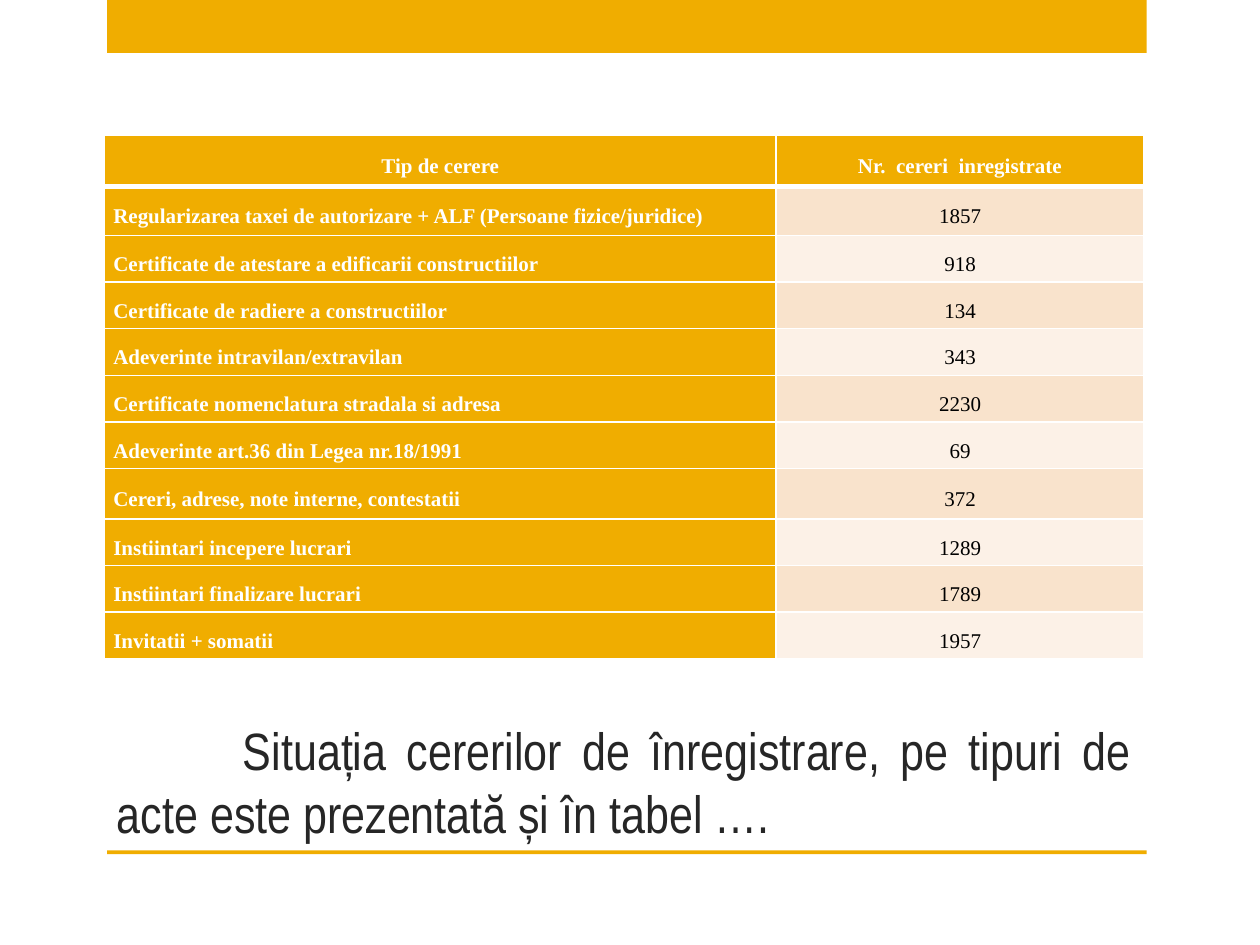
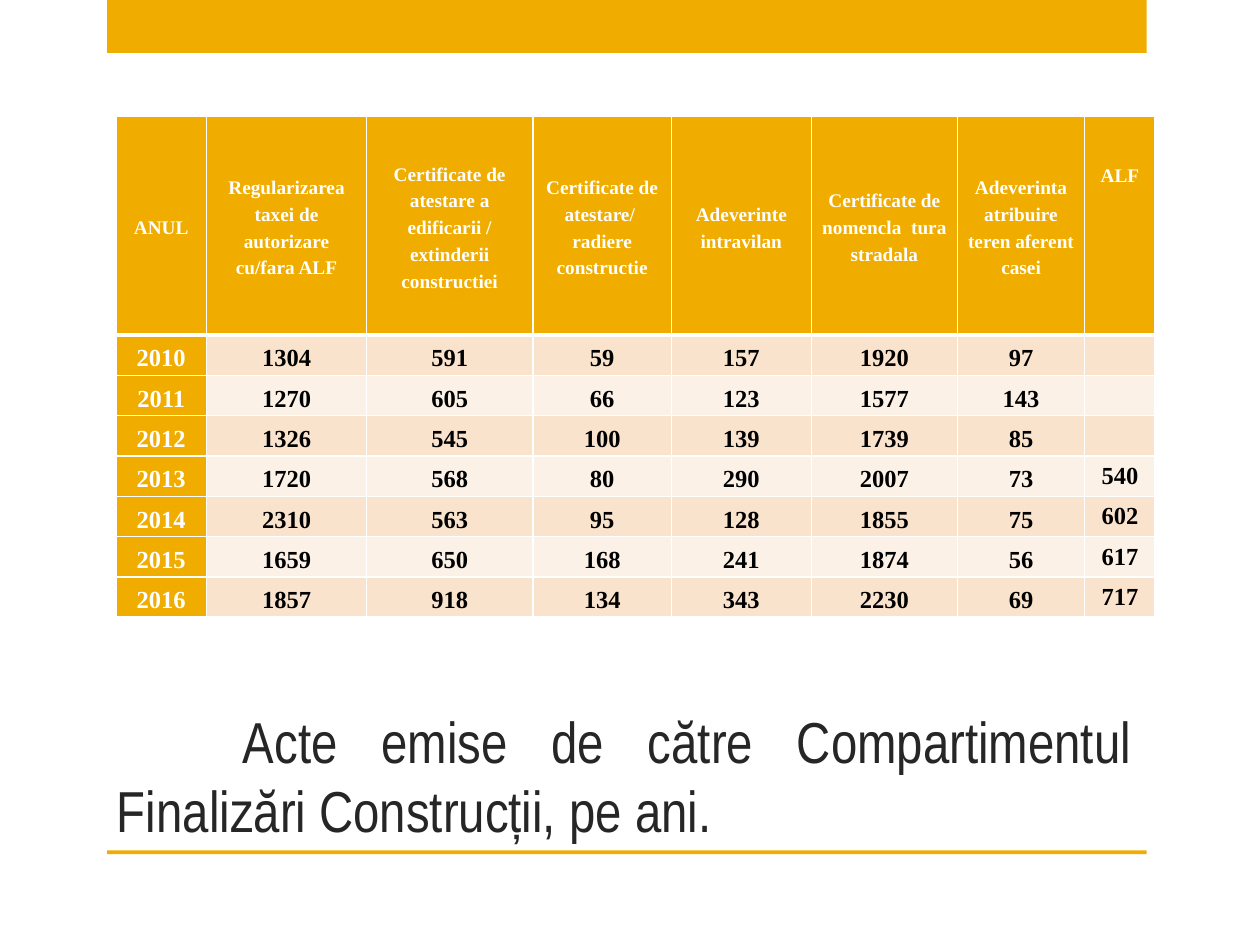
from lxml.etree import SubElement
from pptx import Presentation
from pptx.dml.color import RGBColor
from pptx.enum.shapes import MSO_SHAPE
from pptx.enum.text import MSO_ANCHOR, PP_ALIGN
from pptx.oxml.ns import qn
from pptx.util import Inches, Pt

REQUESTS = [
    ("Tip de cerere", "Nr.  cereri  inregistrate"),
    ("Regularizarea taxei de autorizare + ALF (Persoane fizice/juridice)", 1857),
    ("Certificate de atestare a edificarii constructiilor", 918),
    ("Certificate de radiere a constructiilor", 134),
    ("Adeverinte intravilan/extravilan", 343),
    ("Certificate nomenclatura stradala si adresa", 2230),
    ("Adeverinte art.36 din Legea nr.18/1991", 69),
    ("Cereri, adrese, note interne, contestatii", 372),
    ("Instiintari incepere lucrari", 1289),
    ("Instiintari finalizare lucrari", 1789),
    ("Invitatii + somatii", 1957),
]
YEARS = [
    ("ANUL", "Regularizarea taxei de autorizare cu/fara ALF",
     "Certificate de atestare a edificarii / extinderii constructiei",
     "Certificate de atestare/  radiere constructie", "Adeverinte intravilan",
     "Certificate de nomencla  tura stradala",
     "Adeverinta atribuire teren aferent casei", "ALF"),
    (2010, 1304, 591, 59, 157, 1920, 97, ""),
    (2011, 1270, 605, 66, 123, 1577, 143, ""),
    (2012, 1326, 545, 100, 139, 1739, 85, ""),
    (2013, 1720, 568, 80, 290, 2007, 73, 540),
    (2014, 2310, 563, 95, 128, 1855, 75, 602),
    (2015, 1659, 650, 168, 241, 1874, 56, 617),
    (2016, 1857, 918, 134, 343, 2230, 69, 717),
]
SLIDES = [
    dict(title="Situația cererilor de înregistrare, pe tipuri de acte "
               "este prezentată și în tabel ….",
         size=30, data=REQUESTS, left=0.83, top=1.07,
         cols=[5.33, 2.92], rows=[0.41, 0.39] + [0.37] * 5 + [0.4] + [0.37] * 3,
         head=12, body=12, bold=False, space=1.5, align=PP_ALIGN.LEFT),
    dict(title="Acte emise de către Compartimentul Finalizări Construcții, pe ani.",
         size=33, data=YEARS, left=0.92, top=0.92,
         cols=[0.72, 1.27, 1.32, 1.1, 1.11, 1.16, 1.01, 0.56],
         rows=[1.74] + [0.32] * 7,
         head=11, body=14, bold=True, space=1.25, align=PP_ALIGN.CENTER),
]

GOLD = RGBColor(0xF0, 0xAD, 0x00)
PEACH = RGBColor(0xF9, 0xE3, 0xCC)
CREAM = RGBColor(0xFC, 0xF1, 0xE7)
WHITE = RGBColor(0xFF, 0xFF, 0xFF)
BLACK = RGBColor(0, 0, 0)
GREY = RGBColor(0x26, 0x26, 0x26)
WIDTH = 8.25
BANDS = [(0, 0.42), (6.75, 0.03)]  # top, height


def add_run(para, text, font, size, color, bold=False):
    run = para.add_run()
    run.text = str(text)
    run.font.name, run.font.size = font, Pt(size)
    run.font.bold, run.font.color.rgb = bold, color


def add_bands(slide):
    for top, height in BANDS:
        band = slide.shapes.add_shape(MSO_SHAPE.RECTANGLE, Inches(0.85), Inches(top),
                                      Inches(WIDTH), Inches(height))
        band.shadow.inherit = False
        band.fill.solid()
        band.fill.fore_color.rgb = GOLD
        band.line.fill.background()


def add_title(slide, text, size):
    box = slide.shapes.add_textbox(Inches(0.83), Inches(5), Inches(WIDTH), Inches(1.75))
    frame = box.text_frame
    frame.word_wrap = True
    frame.vertical_anchor = MSO_ANCHOR.BOTTOM
    para = frame.paragraphs[0]
    para.alignment = PP_ALIGN.JUSTIFY
    props = para._p.get_or_add_pPr()
    props.set("marL", "0")
    props.set("indent", str(Inches(1)))
    add_run(para, text, "Arial Narrow", size, GREY)


def add_edges(cell, row):
    """White cell borders, thick between the header and the first row."""
    props = cell._tc.get_or_add_tcPr()
    for side in "LRTB":
        thick = (row, side) in [(0, "B"), (1, "T")]
        line = SubElement(props, qn(f"a:ln{side}"), w=str(Pt(3 if thick else 1)))
        fill = SubElement(line, qn("a:solidFill"))
        SubElement(fill, qn("a:srgbClr"), val=str(WHITE))


def fill_cell(cell, text, row, col, look):
    head, label = row == 0, col == 0
    alf = look["data"][0][col] == "ALF"
    add_edges(cell, row)
    cell.fill.solid()
    cell.fill.fore_color.rgb = GOLD if head or label else PEACH if row % 2 else CREAM
    cell.margin_left = cell.margin_right = Inches(0.07)
    cell.margin_top = Inches(0.35 if alf and head else 0)
    cell.margin_bottom = 0
    cell.vertical_anchor = MSO_ANCHOR.TOP if alf else MSO_ANCHOR.MIDDLE
    if text == "":
        return
    para = cell.text_frame.paragraphs[0]
    para.alignment = look["align"] if label and not head else PP_ALIGN.CENTER
    para.line_spacing, para.space_after = look["space"], Pt(9)
    add_run(para, text, "Times New Roman", look["head" if head else "body"],
            WHITE if head or label else BLACK, head or label or look["bold"])


def add_grid(slide, look):
    cols, rows = look["cols"], look["rows"]
    table = slide.shapes.add_table(
        len(rows), len(cols), Inches(look["left"]), Inches(look["top"]),
        Inches(sum(cols)), Inches(sum(rows))).table
    for col, width in zip(table.columns, cols):
        col.width = Inches(width)
    for row, height in zip(table.rows, rows):
        row.height = Inches(height)
    for r, items in enumerate(look["data"]):
        for c, text in enumerate(items):
            fill_cell(table.cell(r, c), text, r, c, look)


def main():
    deck = Presentation()
    deck.slide_width, deck.slide_height = Inches(10), Inches(7.5)
    for look in SLIDES:
        slide = deck.slides.add_slide(deck.slide_layouts[6])
        add_bands(slide)
        add_title(slide, look["title"], look["size"])
        add_grid(slide, look)
    deck.save("out.pptx")


if __name__ == "__main__":
    main()
